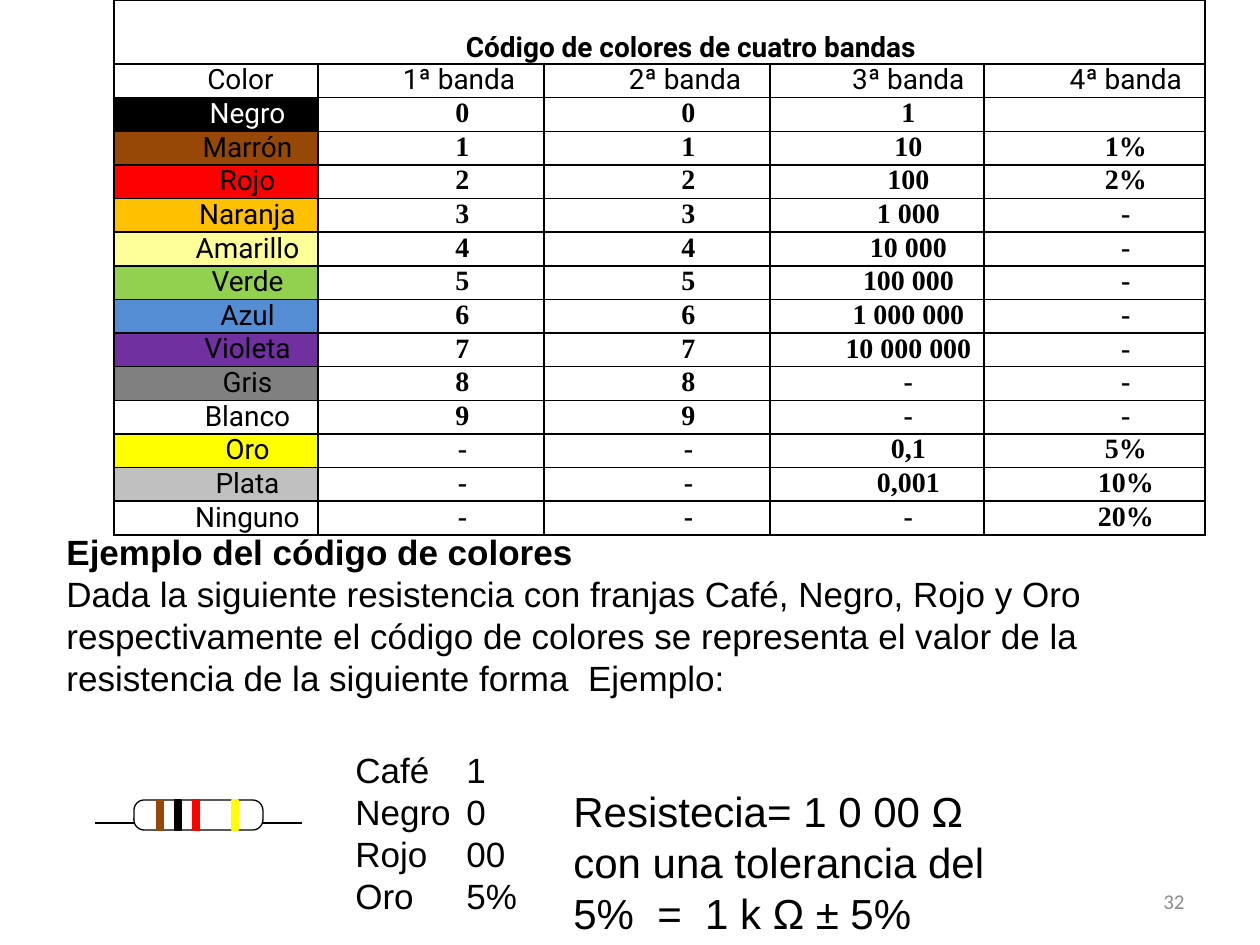
"""Build the slide on the four-band resistor colour code, with a worked example."""
from dataclasses import dataclass

from lxml import etree
from pptx import Presentation
from pptx.dml.color import RGBColor
from pptx.enum.shapes import MSO_CONNECTOR, MSO_SHAPE
from pptx.enum.text import MSO_ANCHOR, PP_ALIGN
from pptx.oxml.ns import qn
from pptx.util import Emu, Pt

RECT, ROUNDED = MSO_SHAPE.RECTANGLE, MSO_SHAPE.ROUNDED_RECTANGLE
STRAIGHT = MSO_CONNECTOR.STRAIGHT
TOP, MIDDLE, BOTTOM = MSO_ANCHOR.TOP, MSO_ANCHOR.MIDDLE, MSO_ANCHOR.BOTTOM
LEFT, CENTER, RIGHT = PP_ALIGN.LEFT, PP_ALIGN.CENTER, PP_ALIGN.RIGHT


@dataclass(frozen=True)
class Theme:
    black: str = "000000"
    white: str = "FFFFFF"
    muted: str = "8C8C8C"
    brown: str = "974706"
    red: str = "FF0000"
    gold: str = "FFFF00"
    label_font: str = "Roboto"
    value_font: str = "Times New Roman"
    body_font: str = "Arial"
    number_font: str = "Calibri"
    table_size: int = 16
    body_size: int = 20
    result_size: int = 24
    number_size: int = 12
    body_leading: int = 24
    result_leading: int = 29
    border: float = 1
    outline: float = 0.75


THEME = Theme()

TABLE_TITLE = "Código de colores de cuatro bandas"
HEADINGS = [("Color", 14), ("1ª banda", 7), ("2ª banda", 7), ("3ª banda", 0), ("4ª banda", 0)]
COLOR_CODES = [
    ("Negro", THEME.black, "0", "0", "1", ""),
    ("Marrón", "984806", "1", "1", "10", "1%"),
    ("Rojo", THEME.red, "2", "2", "100", "2%"),
    ("Naranja", "FFC000", "3", "3", "1 000", "-"),
    ("Amarillo", "FFFF99", "4", "4", "10 000", "-"),
    ("Verde", "92D050", "5", "5", "100 000", "-"),
    ("Azul", "548DD4", "6", "6", "1 000 000", "-"),
    ("Violeta", "7030A0", "7", "7", "10 000 000", "-"),
    ("Gris", "808080", "8", "8", "-", "-"),
    ("Blanco", None, "9", "9", "-", "-"),
    ("Oro", THEME.gold, "-", "-", "0,1", "5%"),
    ("Plata", "C0C0C0", "-", "-", "0,001", "10%"),
    ("Ninguno", None, "-", "-", "-", "20%"),
]
EXAMPLE_TITLE = "Ejemplo del código de colores"
EXAMPLE_TEXT = (
    "Dada la siguiente resistencia con franjas Café, Negro, Rojo y Oro "
    "respectivamente el código de colores se representa el valor de la "
    "resistencia de la siguiente forma  Ejemplo:"
)
READINGS = [("Café", "1"), ("Negro", "0"), ("Rojo", "00"), ("Oro", "5%")]
RESULT = "Resistecia= 1 0 00 Ω con una tolerancia del 5%  =  1 k Ω ± 5%"
SLIDE_NUMBER = "32"

SLIDE_SIZE = (1260, 945)
TABLE_LEFT, TITLE_HEIGHT, ROW_HEIGHT = 114, 64, 28
COLUMN_WIDTHS = [204, 226, 226, 214, 221]
CELL_INDENT, CELL_MARGIN = 63, 3
EXAMPLE_BOX = (54, 524, 1116, 187)
READINGS_BOX = (343, 741, 203, 183)
READING_TAB = 111
RESULT_BOX = (561, 779, 491, 166)
NUMBER_BOX = (903, 876, 294, 50)
RESISTOR_BODY = (134, 800, 129, 30)
BANDS = [(157, THEME.brown), (175, THEME.black), (193, THEME.red), (232, THEME.gold)]
BAND_WIDTH, LEAD_Y, LEAD_LENGTH = 6, 823, 39


def px(length):
    return Emu(round(length * 914400 / 126))


def add_run(paragraph, text, font, size, color=THEME.black, bold=False):
    run = paragraph.add_run()
    run.text = text
    run.font.name, run.font.size, run.font.bold = font, Pt(size), bold
    run.font.color.rgb = RGBColor.from_string(color)


def fill_cell(cell, text, font, color=THEME.black, bold=False, fill=None, extra_right=0):
    cell.margin_left, cell.margin_right = px(CELL_MARGIN), px(CELL_MARGIN + extra_right)
    cell.margin_top = cell.margin_bottom = 0
    paragraph = cell.text_frame.paragraphs[0]
    paragraph.alignment = CENTER
    paragraph._p.get_or_add_pPr().set("marL", str(px(CELL_INDENT)))
    if text:
        add_run(paragraph, text, font, THEME.table_size, color, bold)
    else:
        etree.SubElement(paragraph._p, qn("a:endParaRPr"), sz="1400")
    properties = cell._tc.get_or_add_tcPr()
    for side in ("a:lnL", "a:lnR", "a:lnT", "a:lnB"):
        border = etree.SubElement(properties, qn(side), w=str(Pt(THEME.border)))
        solid = etree.SubElement(border, qn("a:solidFill"))
        etree.SubElement(solid, qn("a:srgbClr"), val=THEME.black)
    if fill:
        cell.fill.solid()
        cell.fill.fore_color.rgb = RGBColor.from_string(fill)
    else:
        cell.fill.background()


def add_code_table(slide):
    heights = [TITLE_HEIGHT] + [ROW_HEIGHT] * (len(COLOR_CODES) + 1)
    table = slide.shapes.add_table(
        len(heights), len(COLUMN_WIDTHS),
        px(TABLE_LEFT), 0, px(sum(COLUMN_WIDTHS)), px(sum(heights)),
    ).table
    table.first_row = table.horz_banding = False
    for column, width in zip(table.columns, COLUMN_WIDTHS):
        column.width = px(width)
    for row, height in zip(table.rows, heights):
        row.height = px(height)
    for index, (heading, extra_right) in enumerate(HEADINGS):
        title = "" if index else TABLE_TITLE
        fill_cell(table.cell(0, index), title, THEME.label_font, bold=True)
        fill_cell(table.cell(1, index), heading, THEME.label_font, extra_right=extra_right)
    table.cell(0, 0).merge(table.cell(0, len(HEADINGS) - 1))
    table.cell(0, 0).vertical_anchor = BOTTOM
    for row, (name, fill, *values) in enumerate(COLOR_CODES, start=2):
        ink = THEME.white if fill == THEME.black else THEME.black
        fill_cell(table.cell(row, 0), name, THEME.label_font, ink, fill=fill)
        for column, value in enumerate(values, start=1):
            fill_cell(table.cell(row, column), value, THEME.value_font, bold=True)


def add_text(slide, box, lines, size, leading=None, anchor=TOP, align=LEFT,
             font=THEME.body_font, color=THEME.black, wrap=True, tab=None):
    frame = slide.shapes.add_textbox(*map(px, box)).text_frame
    frame.word_wrap, frame.vertical_anchor = wrap, anchor
    for index, (text, bold) in enumerate(lines):
        paragraph = frame.add_paragraph() if index else frame.paragraphs[0]
        paragraph.alignment = align
        if leading:
            paragraph.line_spacing = Pt(leading)
        if tab:
            stops = etree.SubElement(paragraph._p.get_or_add_pPr(), qn("a:tabLst"))
            etree.SubElement(stops, qn("a:tab"), pos=str(px(tab)), algn="l")
        add_run(paragraph, text, font, size, color, bold)


def add_block(slide, kind, box, fill, outline):
    block = slide.shapes.add_shape(kind, *map(px, box))
    block.shadow.inherit = False
    block.fill.solid()
    block.fill.fore_color.rgb = RGBColor.from_string(fill)
    block.line.color.rgb = RGBColor.from_string(outline)
    block.line.width = Pt(THEME.outline)
    return block


def add_resistor(slide):
    left, top, width, height = RESISTOR_BODY
    body = add_block(slide, ROUNDED, RESISTOR_BODY, THEME.white, THEME.black)
    body.adjustments[0] = 0.34
    for band_left, color in BANDS:
        add_block(slide, RECT, (band_left, top, BAND_WIDTH, height), color, color)
    for start in (left + width, left - LEAD_LENGTH):
        ends = (start, LEAD_Y, start + LEAD_LENGTH, LEAD_Y)
        lead = slide.shapes.add_connector(STRAIGHT, *map(px, ends))
        lead.line.color.rgb = RGBColor.from_string(THEME.black)
        lead.line.width = Pt(THEME.outline)
        etree.SubElement(lead._element.spPr, qn("a:effectLst"))


def main():
    deck = Presentation()
    deck.slide_width, deck.slide_height = map(px, SLIDE_SIZE)
    slide = deck.slides.add_slide(deck.slide_layouts[6])
    add_text(slide, NUMBER_BOX, [(SLIDE_NUMBER, False)], THEME.number_size, anchor=MIDDLE,
             align=RIGHT, font=THEME.number_font, color=THEME.muted)
    add_code_table(slide)
    add_resistor(slide)
    add_text(slide, EXAMPLE_BOX, [(EXAMPLE_TITLE, True), (EXAMPLE_TEXT, False)],
             THEME.body_size, THEME.body_leading)
    add_text(slide, READINGS_BOX, [("\t".join(reading), False) for reading in READINGS],
             THEME.body_size, THEME.body_leading, anchor=MIDDLE, wrap=False, tab=READING_TAB)
    add_text(slide, RESULT_BOX, [(RESULT, False)], THEME.result_size, THEME.result_leading)
    deck.save("out.pptx")


if __name__ == "__main__":
    main()
